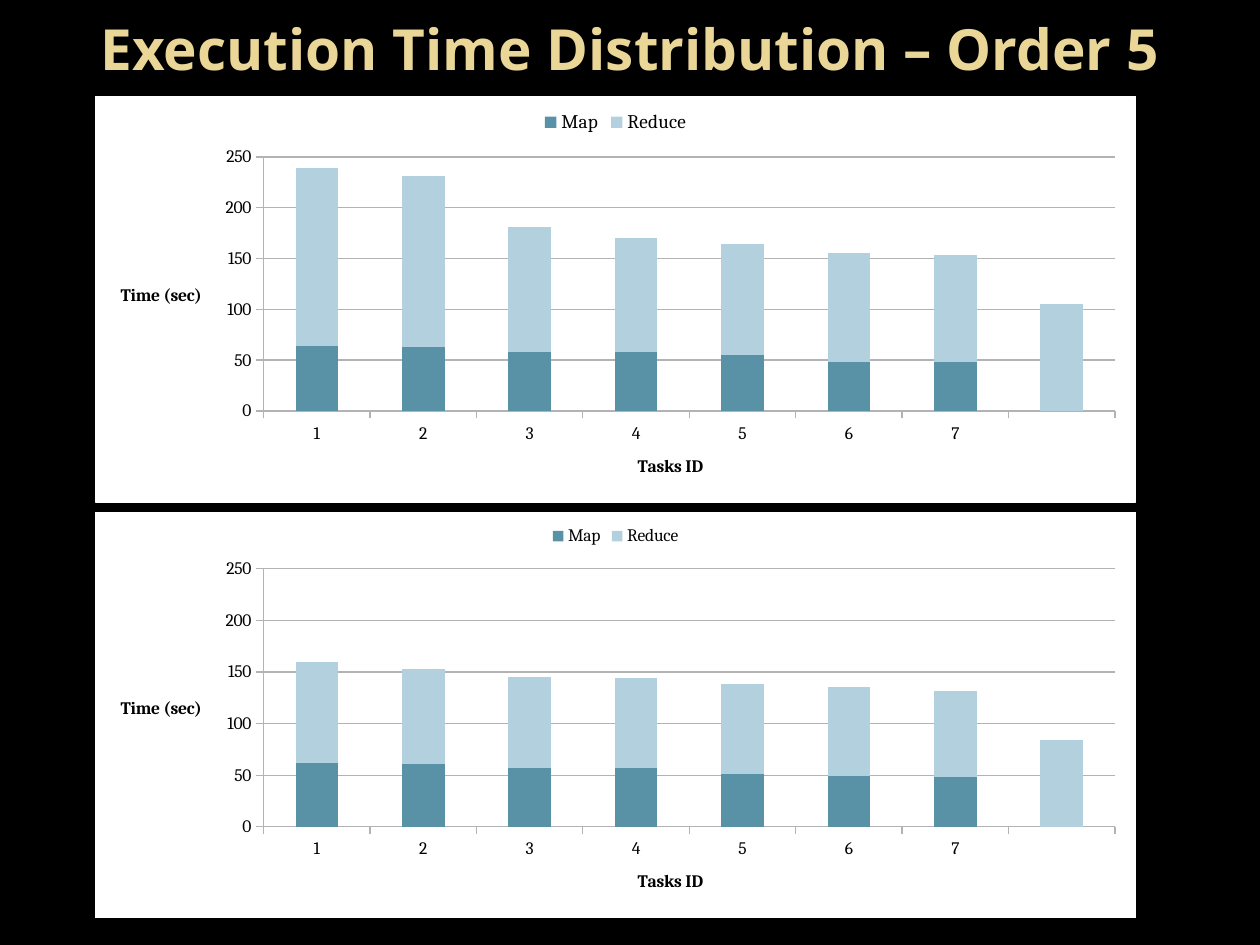
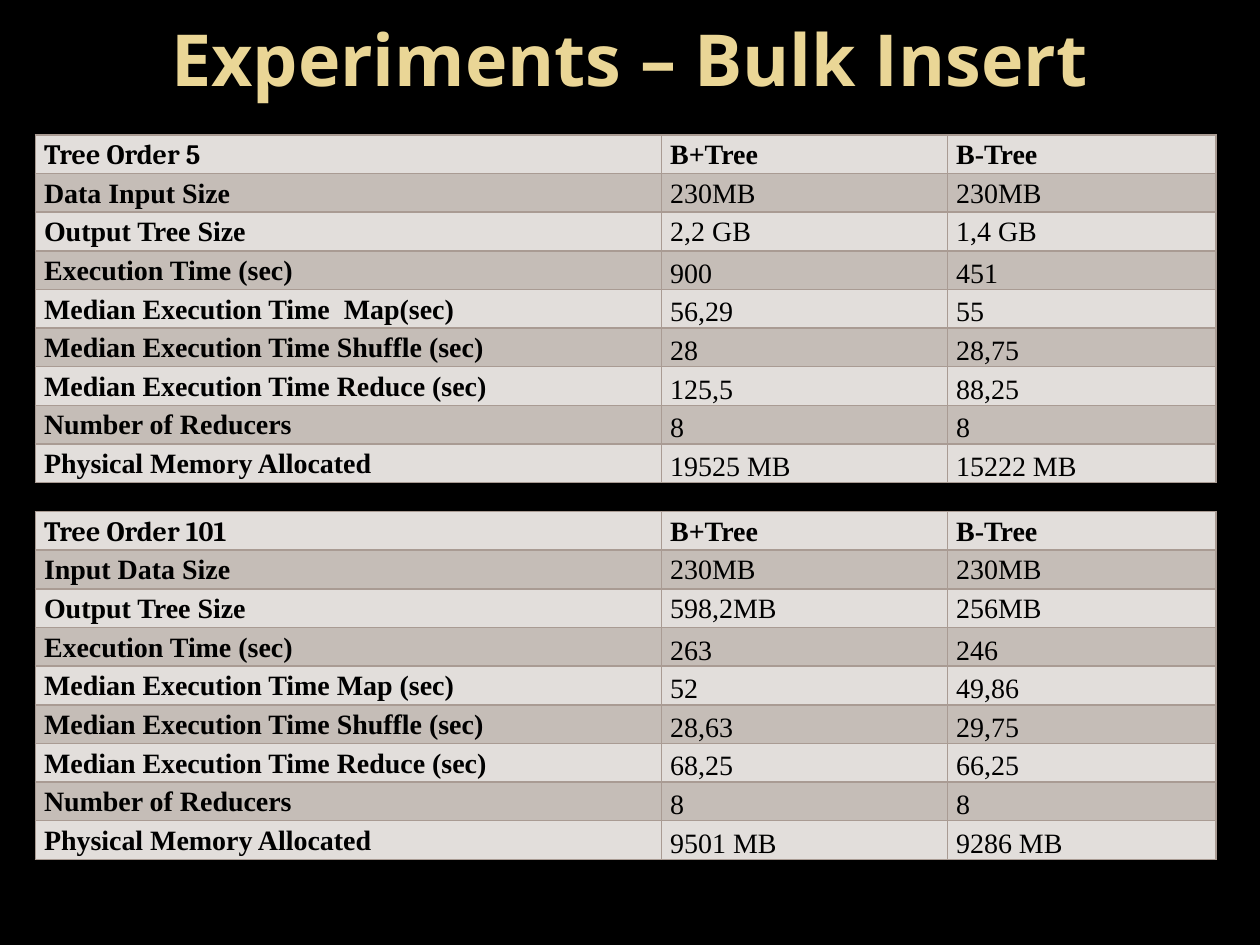
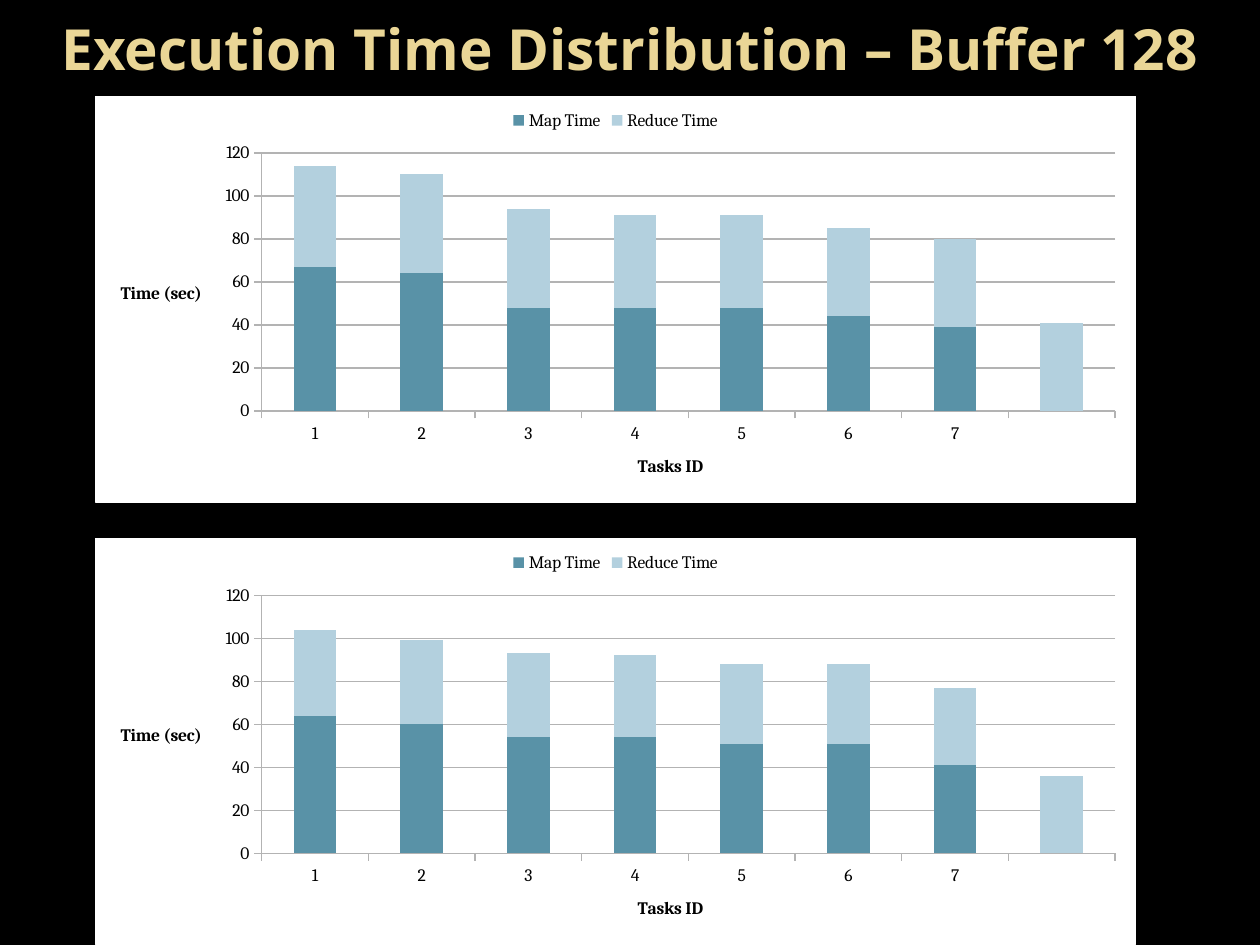
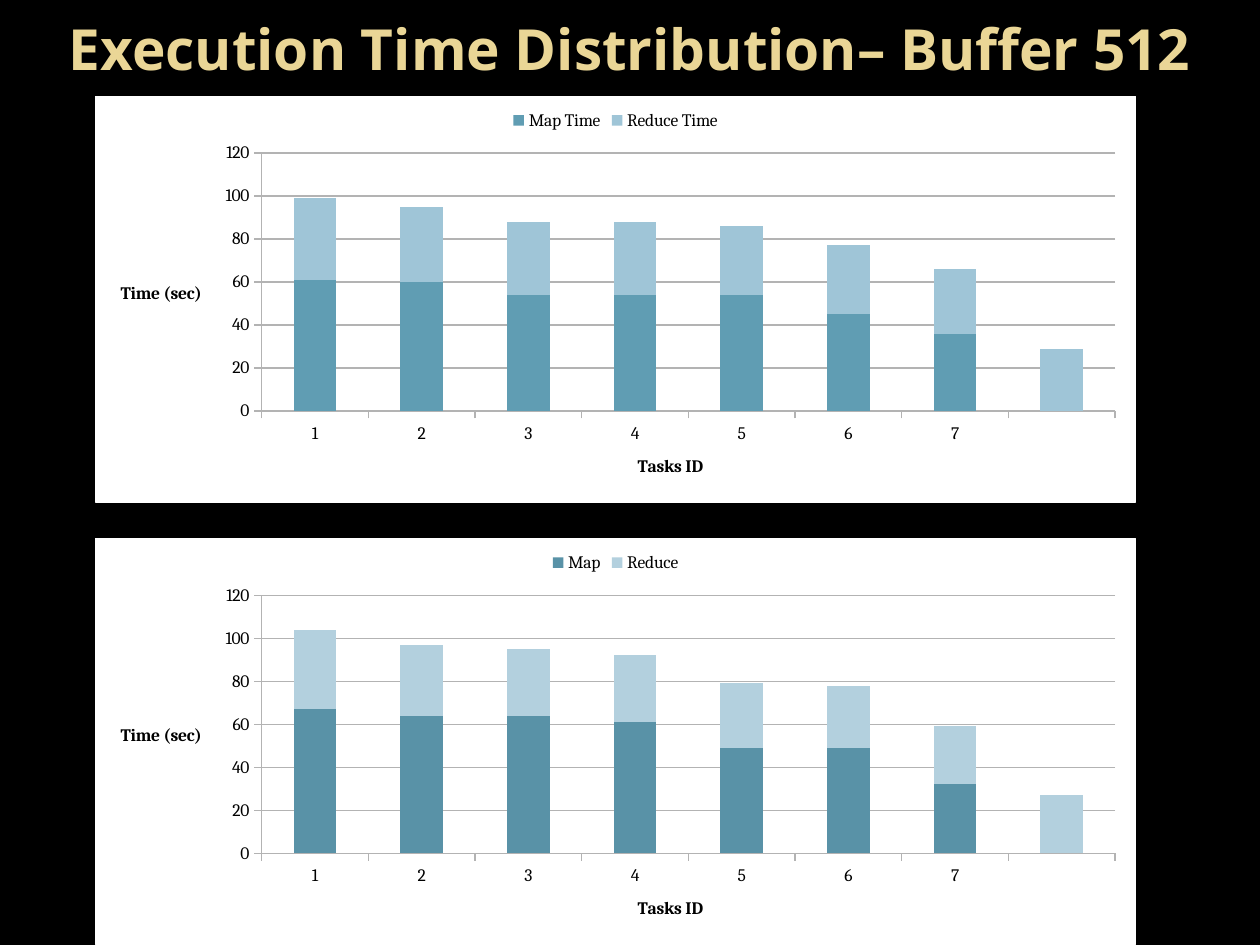
from dataclasses import dataclass

from lxml.etree import SubElement
from pptx import Presentation
from pptx.chart.data import CategoryChartData
from pptx.dml.color import RGBColor
from pptx.enum.chart import XL_CHART_TYPE, XL_LEGEND_POSITION
from pptx.enum.text import MSO_ANCHOR, PP_ALIGN
from pptx.oxml import parse_xml
from pptx.oxml.ns import nsdecls, qn
from pptx.util import Inches, Pt


@dataclass(frozen=True)
class Theme:
    background: str = "000000"
    title: str = "EAD696"
    text: str = "000000"
    panel: str = "FFFFFF"
    grid: str = "B3B3B3"
    row_light: str = "E2DEDB"
    row_dark: str = "C5BDB7"
    border: str = "A99B93"
    title_font: str = "Open Sans"
    chart_font: str = "Cambria"
    table_font: str = "Times New Roman"
    title_size: float = 32.4
    title_size_large: float = 41
    table_size: float = 16
    chart_size: float = 10
    legend_size_large: float = 11


theme = Theme()
color = RGBColor.from_string
TEAL = ("5992A7", "B3D0DE")
BRIGHT_TEAL = ("609DB3", "9FC5D7")


def write_text(text_frame, text, font, size, text_color=theme.text, bold=False,
               align=None, anchor=None, line_spacing=None, space_after=None):
    """Fill a text frame with one formatted paragraph."""
    text_frame.word_wrap = True
    if anchor is not None:
        text_frame.vertical_anchor = anchor
    paragraph = text_frame.paragraphs[0]
    paragraph.alignment = align
    if line_spacing is not None:
        paragraph.line_spacing = line_spacing
    if space_after is not None:
        paragraph.space_after = Pt(space_after)
    run = paragraph.add_run()
    run.text = text
    run.font.name = font
    run.font.size = Pt(size)
    run.font.bold = bold
    run.font.color.rgb = color(text_color)


def add_titled_slide(presentation, title, left, height, size):
    """Add a black slide with a centred title across it."""
    slide = presentation.slides.add_slide(presentation.slide_layouts[6])
    slide.background.fill.solid()
    slide.background.fill.fore_color.rgb = color(theme.background)
    width = presentation.slide_width - 2 * Inches(left)
    title_box = slide.shapes.add_textbox(Inches(left), 0, width, Inches(height))
    write_text(title_box.text_frame, title, theme.title_font, size,
               text_color=theme.title, bold=True, align=PP_ALIGN.CENTER,
               anchor=MSO_ANCHOR.MIDDLE)
    return slide


presentation = Presentation()
presentation.slide_width = Inches(10)
presentation.slide_height = Inches(7.5)

# Slide content, in order; the last task has no map time and no label
task_labels = ["1", "2", "3", "4", "5", "6", "7", ""]
short_names = ("Map", "Reduce")
long_names = ("Map Time", "Reduce Time")

# Each chart: top, series names, colours, legend size, map values, reduce values
order_5_charts = [
    (0.76, short_names, TEAL, theme.legend_size_large,
     [64, 63, 58, 58, 55, 48, 48, None], [175, 168, 123, 112, 109, 107, 105, 105]),
    (4.06, short_names, TEAL, theme.chart_size,
     [62, 61, 57, 57, 51, 49, 48, None], [98, 92, 88, 87, 87, 86, 84, 84]),
]
buffer_128_charts = [
    (0.76, long_names, TEAL, theme.chart_size,
     [67, 64, 48, 48, 48, 44, 39, None], [47, 46, 46, 43, 43, 41, 41, 41]),
    (4.27, long_names, TEAL, theme.chart_size,
     [64, 60, 54, 54, 51, 51, 41, None], [40, 39, 39, 38, 37, 37, 36, 36]),
]
buffer_512_charts = [
    (0.76, long_names, BRIGHT_TEAL, theme.chart_size,
     [61, 60, 54, 54, 54, 45, 36, None], [38, 35, 34, 34, 32, 32, 30, 29]),
    (4.27, short_names, TEAL, theme.chart_size,
     [67, 64, 64, 61, 49, 49, 32, None], [37, 33, 31, 31, 30, 29, 27, 27]),
]

# Each table: top, first row height, other row height, rows
bulk_insert_tables = [
    (1.07, 0.29, 0.28, [
        ("Tree Order 5", "Β+Tree", "B-Tree"),
        ("Data Input Size", "230ΜΒ", "230MB"),
        ("Output Tree Size", "2,2 GΒ", "1,4 GB"),
        ("Execution Time (sec)", "900", "451"),
        ("Median Execution Time  Map(sec)", "56,29", "55"),
        ("Median Execution Time Shuffle (sec)", "28", "28,75"),
        ("Median Execution Time Reduce (sec)", "125,5", "88,25"),
        ("Number of Reducers", "8", "8"),
        ("Physical Memory Allocated", "19525 MB", "15222 MB"),
    ]),
    (4.06, 0.3, 0.3, [
        ("Tree Order 101", "Β+Tree", "B-Tree"),
        ("Input Data Size", "230ΜΒ", "230MB"),
        ("Output Tree Size", "598,2ΜΒ", "256MB"),
        ("Execution Time (sec)", "263", "246"),
        ("Median Execution Time Map (sec)", "52", "49,86"),
        ("Median Execution Time Shuffle (sec)", "28,63", "29,75"),
        ("Median Execution Time Reduce (sec)", "68,25", "66,25"),
        ("Number of Reducers", "8", "8"),
        ("Physical Memory Allocated", "9501 MB", "9286 MB"),
    ]),
]
column_widths = [4.97, 2.27, 2.13]

# Each slide: title, title left, title height, title size, axis maximum, charts, tables
slides = [
    ("Execution Time Distribution – Order 5", 0.5, 0.76, theme.title_size,
     250, order_5_charts, []),
    ("Experiments – Bulk Insert", 0.5, 0.92, theme.title_size_large,
     None, [], bulk_insert_tables),
    ("Execution Time Distribution – Buffer 128", 0, 0.76, theme.title_size,
     120, buffer_128_charts, []),
    ("Execution Time Distribution– Buffer 512", 0, 0.76, theme.title_size,
     120, buffer_512_charts, []),
]

for title, title_left, title_height, title_size, axis_maximum, charts, tables in slides:
    slide = add_titled_slide(presentation, title, title_left, title_height, title_size)

    # Stacked column charts
    for top, names, series_colors, legend_size, map_times, reduce_times in charts:
        chart_data = CategoryChartData()
        chart_data.categories = task_labels
        for name, times in zip(names, (map_times, reduce_times)):
            chart_data.add_series(name, times)
        chart = slide.shapes.add_chart(
            XL_CHART_TYPE.COLUMN_STACKED, Inches(0.75), Inches(top),
            Inches(8.27), Inches(3.23), chart_data).chart
        chart.has_title = False
        chart.font.name = theme.chart_font
        chart.font.size = Pt(theme.chart_size)
        chart.font.color.rgb = color(theme.text)

        # White panel behind the chart
        panel_fill = f'<a:solidFill><a:srgbClr val="{theme.panel}"/></a:solidFill>'
        panel = parse_xml(f'<c:spPr {nsdecls("c", "a")}>{panel_fill}'
                          f'<a:ln w="9525">{panel_fill}</a:ln></c:spPr>')
        chart.element.find(qn("c:txPr")).addprevious(panel)

        # Legend
        chart.has_legend = True
        chart.legend.position = XL_LEGEND_POSITION.TOP
        chart.legend.include_in_layout = False
        chart.legend.font.name = theme.chart_font
        chart.legend.font.size = Pt(legend_size)
        chart.legend.font.color.rgb = color(theme.text)

        # Columns
        plot = chart.plots[0]
        plot.gap_width = 150
        plot.overlap = 100
        plot.vary_by_categories = False
        for series, series_color in zip(plot.series, series_colors):
            series.format.fill.solid()
            series.format.fill.fore_color.rgb = color(series_color)

        # Axes
        for axis, axis_title in ((chart.category_axis, "Tasks ID"),
                                 (chart.value_axis, "Time (sec)")):
            write_text(axis.axis_title.text_frame, axis_title, theme.chart_font,
                       theme.chart_size, bold=True)
            axis.format.line.color.rgb = color(theme.grid)
        value_axis = chart.value_axis
        title_body = value_axis.axis_title.text_frame._txBody.bodyPr
        title_body.set("rot", "0")
        title_body.set("vert", "horz")
        value_axis.minimum_scale = 0
        value_axis.maximum_scale = axis_maximum
        value_axis.has_major_gridlines = True
        value_axis.major_gridlines.format.line.color.rgb = color(theme.grid)

    # Result tables
    for top, first_height, row_height, rows in tables:
        table = slide.shapes.add_table(
            len(rows), len(column_widths), Inches(0.28), Inches(top),
            Inches(sum(column_widths)), Inches(row_height * len(rows))).table
        table.first_row = False
        table.horz_banding = False
        for column, width in zip(table.columns, column_widths):
            column.width = Inches(width)

        for row_index, row in enumerate(rows):
            table.rows[row_index].height = Inches(row_height if row_index else first_height)
            for column_index, text in enumerate(row):
                cell = table.cell(row_index, column_index)
                cell.margin_left = cell.margin_right = Inches(0.07)
                cell.margin_top = cell.margin_bottom = 0

                # Measured values sit at the bottom, the other cells at the top
                is_label = column_index == 0
                is_measured = not is_label and row_index > 2
                is_left = is_measured or row_index > 6
                cell.vertical_anchor = MSO_ANCHOR.BOTTOM if is_measured else MSO_ANCHOR.TOP
                is_corner = is_label and row_index == 0
                write_text(cell.text_frame, text,
                           theme.chart_font if is_corner else theme.table_font,
                           theme.table_size, bold=is_label or row_index == 0,
                           align=PP_ALIGN.LEFT if is_left else PP_ALIGN.JUSTIFY,
                           line_spacing=1.15, space_after=0 if is_measured else 1)

                # Borders come before the fill in the cell properties
                properties = cell._tc.get_or_add_tcPr()
                for side in ("a:lnL", "a:lnR", "a:lnT", "a:lnB"):
                    line = SubElement(properties, qn(side), w=str(Pt(1)))
                    line_fill = SubElement(line, qn("a:solidFill"))
                    SubElement(line_fill, qn("a:srgbClr"), val=theme.border)
                cell.fill.solid()
                cell.fill.fore_color.rgb = color(
                    theme.row_dark if row_index % 2 else theme.row_light)

presentation.save("out.pptx")
